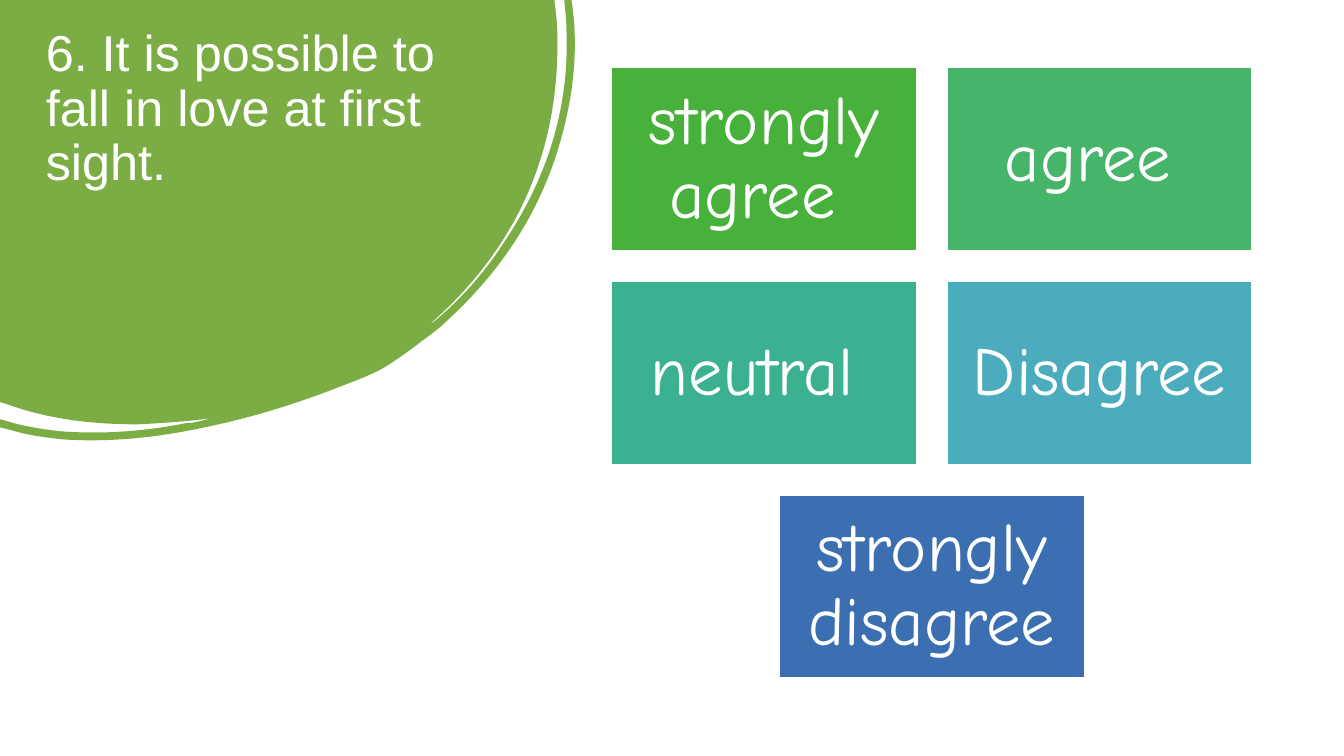
from collections import namedtuple
from lxml.etree import SubElement
from pptx import Presentation
from pptx.dml.color import RGBColor
from pptx.enum.shapes import MSO_SHAPE as Preset
from pptx.enum.text import MSO_ANCHOR as Anchor, MSO_AUTO_SIZE as AutoSize, PP_ALIGN as Align
from pptx.oxml.ns import qn
from pptx.util import Pt

Box = namedtuple("Box", "left top width height")

PAGE = Box(0, 0, 960, 540)
LEAF = Box(0, 0, 411.12, 314.64)
TITLE = Box(25.5, 16.6, 335.5, 279.4)
ANSWERS = Box(436.6, 48.4, 457.8, 436)

WHITE = "FFFFFF"
GREEN = "7BAD44"
QUESTION = "6. It is possible to fall in love at first sight."
ANSWER_ROWS = [
    [("strongly agree ", "48B13B"), ("agree ", "47B569")],
    [("neutral ", "3BB191"), ("Disagree", "4AACBC")],
    [("strongly disagree", "3B6FB1")],
]

LEAF_WIDTH = 571
LEAF_OUTLINE = [
    (0, 0), (550, 0), (552, 17),
    (553, 26, 553, 36, 553, 45), (553, 101, 542, 154, 518, 204),
    (496, 249, 465, 288, 427, 321), (429, 321, 430, 319, 432, 318),
    (459, 295, 482, 269, 501, 239), (543, 176, 565, 107, 562, 30),
    (562, 21, 561, 12, 560, 3), (560, 0), (567, 0), (568, 7),
    (574, 54, 568, 102, 553, 150), (533, 214, 497, 268, 448, 314),
    (439, 323, 429, 331, 419, 338), (409, 346, 399, 353, 387, 361),
    (375, 369, 360, 375, 344, 381), (299, 399, 252, 414, 203, 424),
    (157, 434, 110, 439, 63, 436), (45, 434, 28, 432, 12, 427),
    (0, 424), (0, 416), (4, 417),
    (23, 423, 42, 426, 61, 428), (103, 431, 143, 428, 184, 420),
    (189, 420, 193, 419, 198, 418), (202, 417, 206, 416, 210, 415),
    (186, 418, 161, 420, 136, 421), (92, 421, 48, 416, 7, 401), (0, 399),
]


def colour(code):
    return RGBColor.from_string(code)


def in_points(box):
    return [Pt(length) for length in box]


def paint(shape, fill, line=None):
    shape.shadow.inherit = False
    shape.fill.solid()
    shape.fill.fore_color.rgb = colour(fill)
    if line:
        shape.line.color.rgb = colour(line)
        shape.line.width = Pt(1)
    else:
        shape.line.fill.background()


def write(shape, text, font, size, align, anchor, inset):
    frame = shape.text_frame
    frame.text = text
    frame.word_wrap = True
    frame.auto_size = AutoSize.NONE
    frame.vertical_anchor = anchor
    frame.margin_left = frame.margin_right = Pt(inset[0])
    frame.margin_top = frame.margin_bottom = Pt(inset[1])
    para = frame.paragraphs[0]
    para.alignment = align
    para.line_spacing = 0.9
    para.space_before = Pt(0)
    span = para.runs[0]
    span.font.name = font
    span.font.size = Pt(size)
    span.font.color.rgb = colour(WHITE)


def bend(shape, segments):
    lines = list(shape.element.iter(qn("a:lnTo")))
    for line, segment in zip(lines, segments):
        if len(segment) == 2:
            continue
        curve = line.makeelement(qn("a:cubicBezTo"))
        for x, y in zip(segment[::2], segment[1::2]):
            SubElement(curve, qn("a:pt"), x=str(x), y=str(y))
        line.getparent().replace(line, curve)


def add_backdrop(page, box):
    paint(page.shapes.add_shape(Preset.RECTANGLE, *in_points(box)), WHITE)


def add_leaf(page, box):
    start, *segments = LEAF_OUTLINE
    builder = page.shapes.build_freeform(*start, scale=Pt(box.width / LEAF_WIDTH))
    builder.add_line_segments([segment[-2:] for segment in segments], close=True)
    leaf = builder.convert_to_shape(Pt(box.left), Pt(box.top))
    bend(leaf, segments)
    paint(leaf, GREEN)


def add_question(page, box):
    title = page.shapes.title
    title.left, title.top, title.width, title.height = in_points(box)
    write(title, QUESTION, "Arial", 36, Align.LEFT, Anchor.TOP, (7.2, 3.6))
    page.shapes.element.append(title.element)


def add_answers(page, box):
    width = box.width / 2.1
    height = 0.6 * width
    gap = 0.1 * width
    for row, answers in enumerate(ANSWER_ROWS):
        row_width = len(answers) * (width + gap) - gap
        left = box.left + (box.width - row_width) / 2
        top = box.top + row * (height + gap)
        for column, (answer, fill) in enumerate(answers):
            place = Box(left + column * (width + gap), top, width, height)
            card = page.shapes.add_shape(Preset.RECTANGLE, *in_points(place))
            paint(card, fill, WHITE)
            write(card, answer, "Comic Neue", 49, Align.CENTER, Anchor.MIDDLE, (14.4, 14.4))


def main():
    deck = Presentation()
    deck.slide_width, deck.slide_height = Pt(PAGE.width), Pt(PAGE.height)
    page = deck.slides.add_slide(deck.slide_layouts[5])
    add_backdrop(page, PAGE)
    add_leaf(page, LEAF)
    add_question(page, TITLE)
    add_answers(page, ANSWERS)
    deck.save("out.pptx")


if __name__ == "__main__":
    main()
